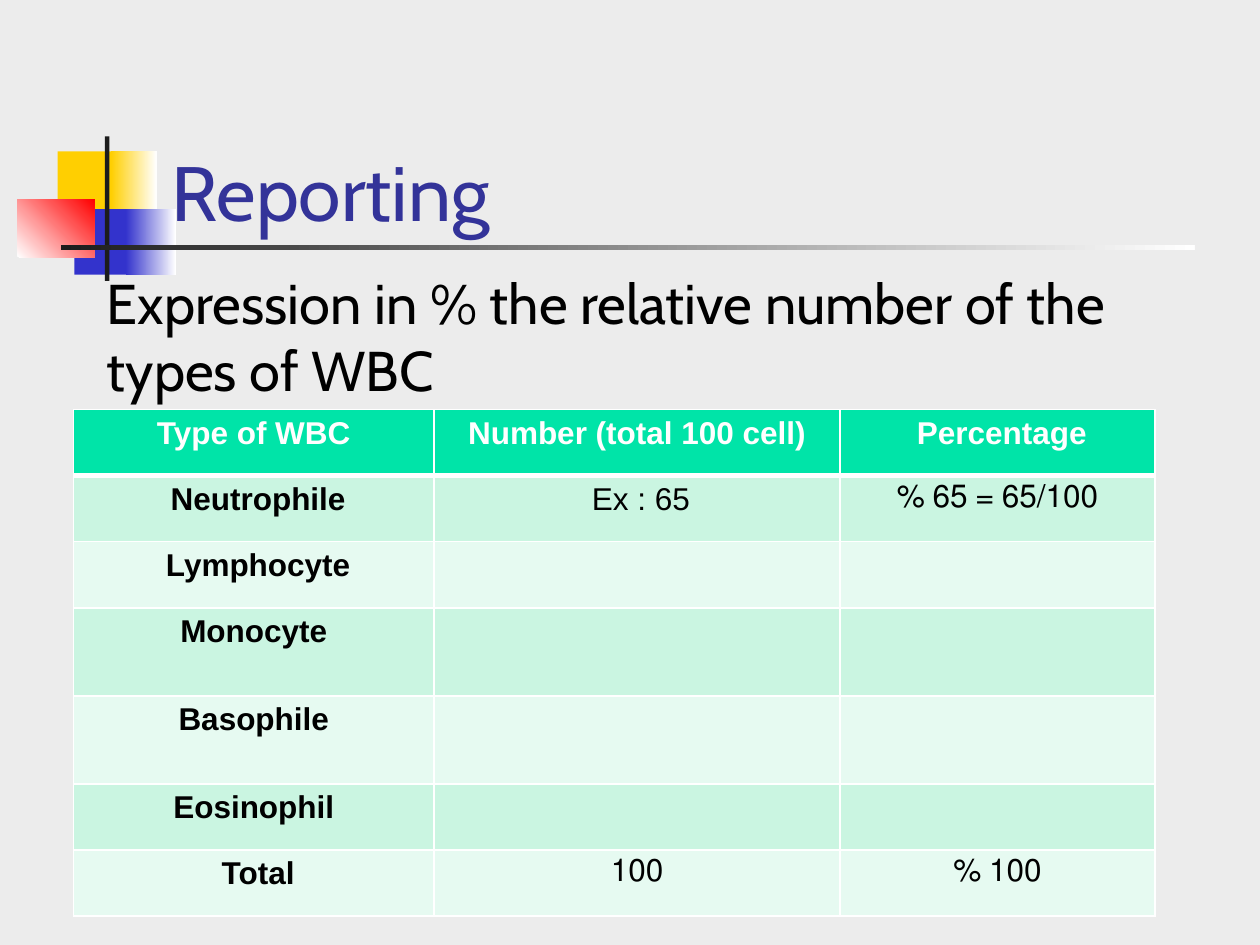
from lxml import etree
from pptx import Presentation
from pptx.dml.color import RGBColor
from pptx.enum import shapes, text
from pptx.oxml.ns import qn
from pptx.util import Pt

TITLE = "Reporting"
BODY = "Expression in % the relative number of the types of WBC"
ROWS = [
    ("Type of WBC", "Number (total 100 cell)", "Percentage "),
    ("Neutrophile ", "Ex : 65 ", "65/100 = 65 %"),
    ("Lymphocyte ", "", ""),
    ("Monocyte", "", ""),
    ("Basophile", "", ""),
    ("Eosinophil", "", ""),
    ("Total ", "100", "100 %"),
]
COLUMN_WIDTHS = [206, 232, 180]
ROW_HEIGHTS = [37.8, 37.8, 37.8, 50.3, 50.3, 37.8, 37.8]
HEADER_FILL, BAND_FILLS = "00E4A8", ("E6FAF1", "CAF5E1")

# left, top, width, height, colours (two make a gradient), gradient angle
ORNAMENTS = [
    (33, 86.5, 34.5, 37.5, ["FFCF01"], 0),
    (63.5, 86.5, 26, 37.5, ["FFCF01", "FFFFFF"], 0),
    (42.5, 119.5, 33, 37.5, ["3333CC"], 0),
    (72, 119.5, 28.5, 37.5, ["3333CC", "FFFFFF"], 0),
    (10, 113.75, 44, 33.25, ["FFFFFF", "FF0000"], 45),
    (60, 78, 2.5, 82.5, ["1C1C1C"], 0),
    (34.75, 140.25, 648, 2.5, ["1C1C1C", "FFFFFF"], 0),
]


def color(value):
    return RGBColor.from_string(value)


def write(frame, content, size, font, fill, bold=False, centered=False, rtl=False):
    paragraph = frame.paragraphs[0]
    if centered:
        paragraph.alignment = text.PP_ALIGN.CENTER
    if rtl:
        paragraph._p.get_or_add_pPr().set("rtl", "1")
    run = paragraph.add_run()
    run.text = content
    run.font.size, run.font.name, run.font.bold = Pt(size), font, bold
    run.font.color.rgb = color(fill)


def add_ornament(slide, left, top, width, height, colors, angle):
    shape = slide.shapes.add_shape(
        shapes.MSO_SHAPE.RECTANGLE, Pt(left), Pt(top), Pt(width), Pt(height))
    shape.shadow.inherit = False
    shape.line.fill.background()
    if len(colors) == 1:
        shape.fill.solid()
        shape.fill.fore_color.rgb = color(colors[0])
        return
    shape.fill.gradient()
    shape.fill.gradient_angle = angle
    for stop, value in zip(shape.fill.gradient_stops, colors):
        stop.color.rgb = color(value)


def add_text_box(slide, left, top, width, height, content, anchor, **style):
    box = slide.shapes.add_textbox(Pt(left), Pt(top), Pt(width), Pt(height))
    frame = box.text_frame
    frame.word_wrap = True
    frame.vertical_anchor = anchor
    write(frame, content, font="Cabin", **style)


def set_borders(cell, **widths):
    """Draw white borders; widths are keyed by side: L, R, T, B."""
    properties = cell._tc.get_or_add_tcPr()
    for position, (side, width) in enumerate(widths.items()):
        line = etree.Element(qn(f"a:ln{side}"), w=str(Pt(width)))
        fill = etree.SubElement(line, qn("a:solidFill"))
        etree.SubElement(fill, qn("a:srgbClr"), val="FFFFFF")
        properties.insert(position, line)


def add_results_table(slide, left, top):
    table = slide.shapes.add_table(
        len(ROWS), len(COLUMN_WIDTHS), Pt(left), Pt(top),
        Pt(sum(COLUMN_WIDTHS)), Pt(sum(ROW_HEIGHTS))).table
    for column, width in zip(table.columns, COLUMN_WIDTHS):
        column.width = Pt(width)
    for i, (row, height, contents) in enumerate(zip(table.rows, ROW_HEIGHTS, ROWS)):
        row.height = Pt(height)
        header = i == 0
        for j, (cell, content) in enumerate(zip(row.cells, contents)):
            cell.fill.solid()
            cell.fill.fore_color.rgb = color(HEADER_FILL if header else BAND_FILLS[i % 2])
            set_borders(cell, L=1, R=1, T=3 if i == 1 else 1, B=3 if header else 1)
            if content:
                write(cell.text_frame, content, 18, "Arial",
                      "FFFFFF" if header else "000000",
                      bold=header or j == 0, centered=True, rtl=True)


def main():
    presentation = Presentation()
    presentation.slide_width, presentation.slide_height = Pt(720), Pt(540)
    slide = presentation.slides.add_slide(presentation.slide_layouts[6])
    slide.background.fill.solid()
    slide.background.fill.fore_color.rgb = color("ECECEC")
    for ornament in ORNAMENTS:
        add_ornament(slide, *ornament)
    add_text_box(slide, 91, 49, 613.5, 90, TITLE, text.MSO_ANCHOR.BOTTOM,
                 size=44, fill="333399")
    add_text_box(slide, 54, 150, 612, 324, BODY, text.MSO_ANCHOR.TOP,
                 size=32, fill="000000")
    add_results_table(slide, 42, 234)
    presentation.save("out.pptx")


if __name__ == "__main__":
    main()
